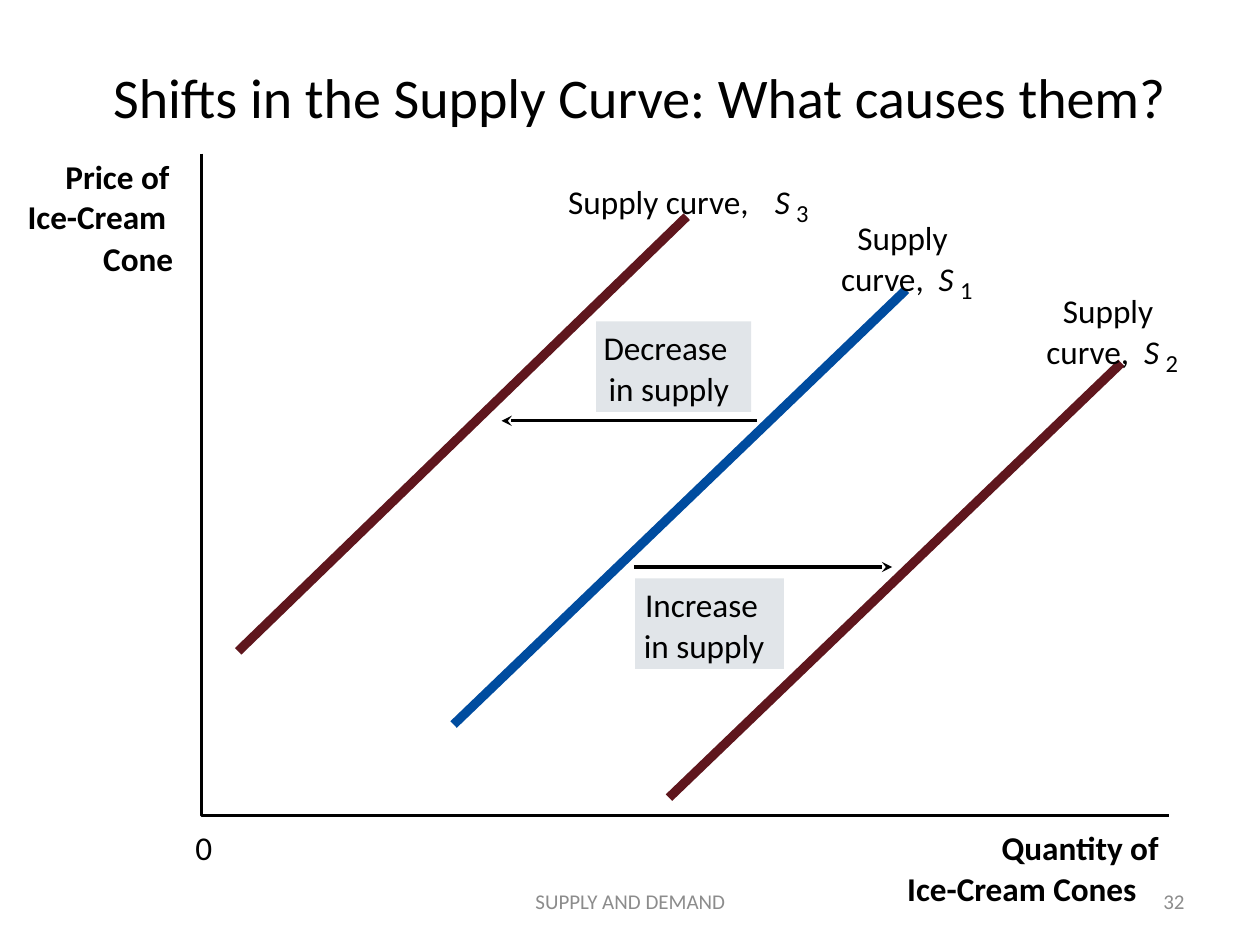
import pptx
import pptx.util
import pptx.dml.color
import pptx.enum.shapes
import pptx.enum.text
import pptx.oxml.ns
from lxml import etree

Pt = pptx.util.Pt
ALIGN = pptx.enum.text.PP_ALIGN
FONT = "Calibri"
COLORS = {"black": "000000", "blue": "004C9F", "maroon": "5F161D",
          "panel": "E1E5E9", "grey": "8C8C8C"}

# Content, all lengths in points
# Framed text: text, (left, top, width, height), size, color, alignment, line spacing
FRAMED = [
    ("Shifts in the Supply Curve: What causes them?",
     (47.5, 27.4, 636.5, 62.6), 32, "black", ALIGN.CENTER, 0.8),
    ("32", (516.2, 500.4, 167.8, 28.8), 12, "grey", ALIGN.RIGHT, None),
    ("SUPPLY AND DEMAND", (246.2, 500.4, 228.2, 28.8), 12, "grey", ALIGN.CENTER, None),
]
AXES = [(115.2, 87.8), (115.2, 465.8), (668.2, 465.8)]
# Axis labels: text, left, top, width, bold
AXIS_LABELS = [
    ("Price of", 37.4, 89.3, 78.5, True),
    ("Ice-Cream", 15.8, 112.3, 100.8, True),
    ("Cone", 59, 136.1, 56.9, True),
    ("Quantity of", 572.4, 473, 109.4, True),
    ("Ice-Cream Cones", 518.4, 496.1, 164.2, True),
    ("0", 111.6, 473, 19.4, False),
]
# Curves: number, color, start, end, position of the letter S, label on one line
CURVES = [
    ("3", "maroon", (136.1, 372.2), (392.4, 123.8), (442.8, 103.7), True),
    ("1", "blue", (259.2, 414), (517.7, 165.6), (536.4, 147.6), False),
    ("2", "maroon", (382.3, 455.8), (640.8, 207.4), (653.8, 189.4), False),
]
# Shifts: panel, lines as (text, left, width), arrow start, arrow end
SHIFTS = [
    ((340.6, 183.6, 88.6, 51.8),
     [("Decrease", 344.9, 81.4), ("in supply", 347.8, 75.6)],
     (432.7, 240.5), (286.6, 240.5)),
    ((362.9, 330.5, 85, 51.8),
     [("Increase", 368.6, 73.4), ("in supply", 367.9, 75.6)],
     (362.2, 324), (509.8, 324)),
]
LINE_STEP = 23.4

prs = pptx.Presentation()
prs.slide_width, prs.slide_height = Pt(720), Pt(540)
s = prs.slides.add_slide(prs.slide_layouts[6])


def rgb(name):
    return pptx.dml.color.RGBColor.from_string(COLORS[name])


def style(p, size, color="black", bold=False, italic=False):
    p.font.name, p.font.size = FONT, Pt(size)
    p.font.bold, p.font.italic = bold, italic
    p.font.color.rgb = rgb(color)


def add_label(text, left, top, width, height=26, size=19, bold=False, italic=False):
    tf = s.shapes.add_textbox(Pt(left), Pt(top), Pt(width), Pt(height)).text_frame
    tf.margin_left = tf.margin_right = tf.margin_top = tf.margin_bottom = 0
    tf.word_wrap = False
    tf.auto_size = pptx.enum.text.MSO_AUTO_SIZE.SHAPE_TO_FIT_TEXT
    p = tf.paragraphs[0]
    p.text = text
    style(p, size, bold=bold, italic=italic)


def add_line(start, end, color, width, arrow=False):
    line = s.shapes.add_connector(pptx.enum.shapes.MSO_CONNECTOR.STRAIGHT,
                                  *map(Pt, start + end))
    line.line.color.rgb = rgb(color)
    line.line.width = Pt(width)
    if arrow:
        etree.SubElement(line.line._get_or_add_ln(), pptx.oxml.ns.qn("a:tailEnd"),
                         type="stealth")
    etree.SubElement(line._element.spPr, pptx.oxml.ns.qn("a:effectLst"))


# Title and footer
for text, box, size, color, align, spacing in FRAMED:
    tf = s.shapes.add_textbox(*map(Pt, box)).text_frame
    tf.word_wrap = True
    tf.vertical_anchor = pptx.enum.text.MSO_ANCHOR.MIDDLE
    p = tf.paragraphs[0]
    p.text, p.alignment, p.line_spacing = text, align, spacing
    style(p, size, color)

# Axes
builder = s.shapes.build_freeform(*map(Pt, AXES[0]))
builder.add_line_segments([(Pt(x), Pt(y)) for x, y in AXES[1:]], close=False)
axes = builder.convert_to_shape()
axes.shadow.inherit = False
axes.fill.background()
axes.line.color.rgb = rgb("black")
axes.line.width = Pt(1.75)
for text, left, top, width, bold in AXIS_LABELS:
    add_label(text, left, top, width, bold=bold)

# Shift panels and arrows
for panel, lines, start, end in SHIFTS:
    sp = s.shapes.add_shape(pptx.enum.shapes.MSO_SHAPE.RECTANGLE, *map(Pt, panel))
    sp.shadow.inherit = False
    sp.fill.solid()
    sp.fill.fore_color.rgb = rgb("panel")
    sp.line.fill.background()
    for i, (text, left, width) in enumerate(lines):
        add_label(text, left, panel[1] + 3.6 + i * LINE_STEP, width, 23)
    add_line(start, end, "black", 1.75, arrow=True)

# Supply curves, each label placed relative to its letter S
for number, color, start, end, (x, y), one_line in CURVES:
    add_line(start, end, color, 5.25)
    if one_line:
        add_label("Supply curve,", x - 118.1, y, 126.7)
    else:
        add_label("Supply", x - 46.4, y - LINE_STEP, 65.5)
        add_label("curve,", x - 55.8, y, 64.8)
    add_label("S", x, y, 21.6, italic=True)
    add_label(number, x + 12.2, y + 9.4, 13.7, 19.4, size=14)

prs.save("out.pptx")
